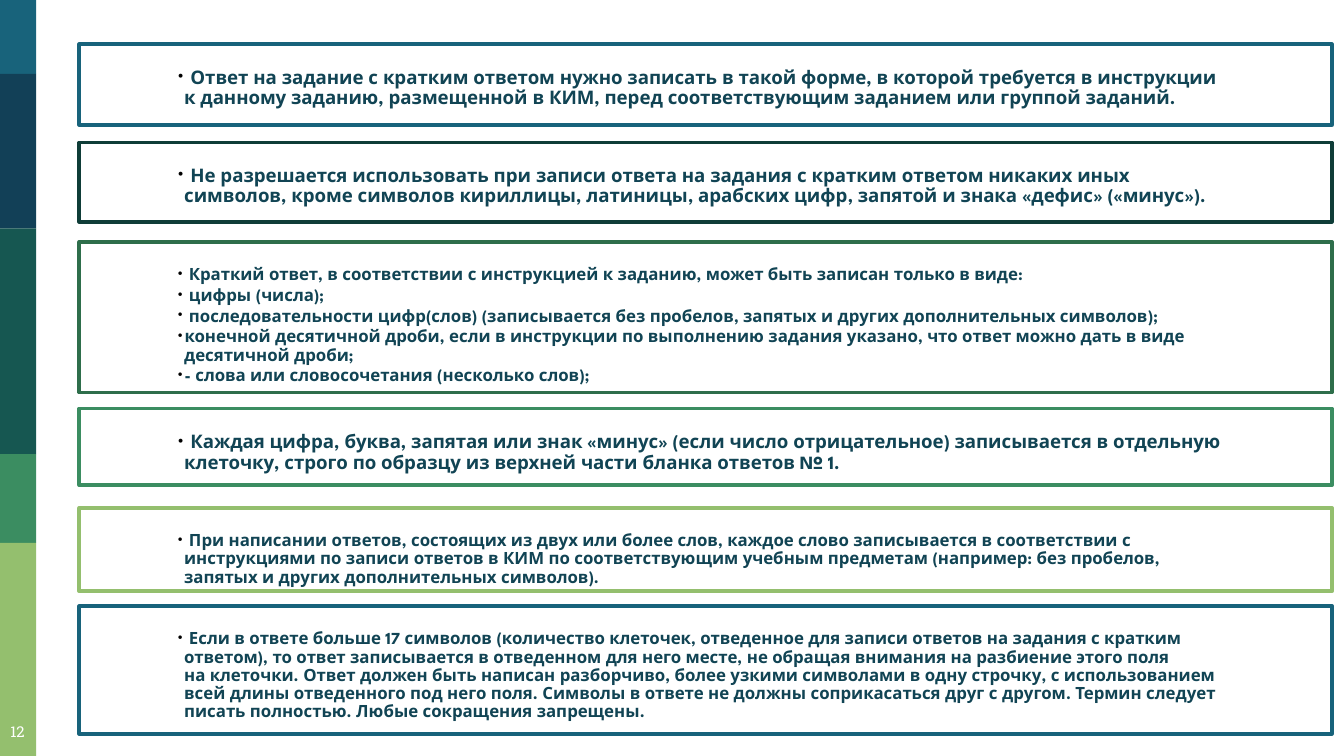
from lxml.etree import SubElement
from pptx import Presentation
from pptx.dml.color import RGBColor
from pptx.enum.shapes import MSO_SHAPE
from pptx.enum.text import MSO_ANCHOR, PP_ALIGN
from pptx.oxml.ns import qn
from pptx.util import Inches, Pt

WHITE = RGBColor(0xFF, 0xFF, 0xFF)
TEXT = RGBColor(0x11, 0x44, 0x54)
BLUE = RGBColor(0x18, 0x63, 0x7B)
NAVY = RGBColor(0x12, 0x40, 0x57)
TEAL = RGBColor(0x16, 0x57, 0x51)
DARK = RGBColor(0x0F, 0x3D, 0x38)
FOREST = RGBColor(0x2E, 0x6E, 0x4B)
GREEN = RGBColor(0x3B, 0x8D, 0x61)
LIME = RGBColor(0x94, 0xBF, 0x6E)

SLIDE_W = 10
SLIDE_H = SLIDE_W * 9 / 16

# In the rules below, ~ stands for a no-break space
NO_BREAK_SPACE = chr(160)

# Side bar: top edge and colour of each band
BANDS = [(0, BLUE), (0.55, NAVY), (1.7, TEAL), (3.38, GREEN), (4.04, LIME)]

# Rules: top, height, border colour, text size, paragraphs
RULES = [
    (0.33, 0.6, BLUE, 10, [
        " Ответ на~задание с~кратким ответом нужно записать в~такой форме, в~которой требуется в~инструкции к~данному заданию, размещенной в~КИМ, перед соответствующим заданием или группой заданий.",
    ]),
    (1.06, 0.59, DARK, 10, [
        " Не разрешается использовать при записи ответа на~задания с~кратким ответом никаких иных символов, кроме символов кириллицы, латиницы, арабских цифр, запятой и~знака «дефис» («минус»).",
    ]),
    (1.8, 1.12, FOREST, 9, [
        " Краткий ответ, в~соответствии с~инструкцией к~заданию, может быть записан только в~виде:",
        " цифры (числа);",
        " последовательности цифр(слов) (записывается без пробелов, запятых и других дополнительных символов);",
        "конечной десятичной дроби, если в инструкции по выполнению задания указано, что ответ можно дать в виде десятичной дроби;",
        "- слова или словосочетания (несколько слов);",
    ]),
    (3.04, 0.57, GREEN, 10, [
        " Каждая цифра, буква, запятая или знак «минус» (если число отрицательное) записывается в~отдельную клеточку, строго по~образцу из~верхней части бланка ответов №~1.",
    ]),
    (3.78, 0.62, LIME, 9, [
        " При написании ответов, состоящих из~двух или более слов, каждое слово записывается в~соответствии с инструкциями по~записи ответов в~КИМ по~соответствующим учебным предметам (например: без пробелов, запятых и~других дополнительных символов).",
    ]),
    (4.51, 0.95, BLUE, 9, [
        " Если в~ответе больше 17 символов (количество клеточек, отведенное для записи ответов на~задания с~кратким ответом), то~ответ записывается в~отведенном для него месте, не~обращая внимания на~разбиение этого поля на~клеточки. Ответ должен быть написан разборчиво, более узкими символами в~одну строчку, с~использованием всей длины отведенного под него поля. Символы в~ответе не~должны соприкасаться друг с~другом. Термин следует писать полностью. Любые сокращения запрещены.",
    ]),
]


def set_all(target, values):
    for name, value in values.items():
        setattr(target, name, value)


def add_rect(slide, left, top, width, height, fill):
    rect = slide.shapes.add_shape(
        MSO_SHAPE.RECTANGLE, *map(Inches, (left, top, width, height)))
    rect.shadow.inherit = False
    rect.fill.solid()
    rect.fill.fore_color.rgb = fill
    return rect


def add_bullet(paragraph):
    properties = paragraph._p.get_or_add_pPr()
    properties.set("marL", str(Inches(0.06)))
    properties.set("indent", str(Inches(-0.06)))
    colour = SubElement(properties, qn("a:buClr"))
    SubElement(colour, qn("a:srgbClr"), val="000000")
    SubElement(properties, qn("a:buFont"), typeface="League Spartan")
    SubElement(properties, qn("a:buChar"), char="•")


def add_side_bar(slide, left, top, width, height):
    # Each band ends where the next begins
    edges = [start for start, _ in BANDS[1:]] + [height]
    for (start, colour), end in zip(BANDS, edges):
        band = add_rect(slide, left, top + start, width, end - start, colour)
        band.line.fill.background()

    # Page number
    number = slide.shapes.add_textbox(
        Inches(left - 0.06), Inches(top + height - 0.36), Inches(0.38), Inches(0.35))
    frame = number.text_frame
    set_all(frame, {"word_wrap": True, "vertical_anchor": MSO_ANCHOR.MIDDLE,
                    "margin_left": Inches(0.1), "margin_right": Inches(0.1),
                    "margin_top": Inches(0.1), "margin_bottom": Inches(0.1)})
    paragraph = frame.paragraphs[0]
    paragraph.alignment = PP_ALIGN.CENTER
    run = paragraph.add_run()
    run.text = "12"
    set_all(run.font, {"name": "Roboto Slab", "size": Pt(8)})
    run.font.color.rgb = WHITE


def add_rule(slide, left, top, width, height, border, size, lines):
    box = add_rect(slide, left, top, width, height, WHITE)
    box.line.color.rgb = border
    box.line.width = Pt(2)
    # Slightly transparent fill
    fill_colour = box.fill._xPr.find(qn("a:solidFill"))[0]
    SubElement(fill_colour, qn("a:alpha"), val="90000")

    frame = box.text_frame
    set_all(frame, {"word_wrap": True, "vertical_anchor": MSO_ANCHOR.TOP,
                    "margin_left": Inches(0.72), "margin_right": Inches(0.72),
                    "margin_top": Inches(0.18), "margin_bottom": Inches(0.06)})
    for index, line in enumerate(lines):
        paragraph = frame.add_paragraph() if index else frame.paragraphs[0]
        set_all(paragraph, {"level": 1, "alignment": PP_ALIGN.LEFT,
                            "line_spacing": 0.9, "space_after": Pt(size * 0.15)})
        add_bullet(paragraph)
        run = paragraph.add_run()
        run.text = line.replace("~", NO_BREAK_SPACE)
        set_all(run.font, {"name": "League Spartan", "size": Pt(size), "bold": True})
        run.font.color.rgb = TEXT


def main():
    prs = Presentation()
    prs.slide_width, prs.slide_height = Inches(SLIDE_W), Inches(SLIDE_H)
    slide = prs.slides.add_slide(prs.slide_layouts[6])
    add_side_bar(slide, 0, 0, 0.27, SLIDE_H)
    for top, height, border, size, lines in RULES:
        add_rule(slide, 0.59, top, 9.32, height, border, size, lines)
    prs.save("out.pptx")


if __name__ == "__main__":
    main()
